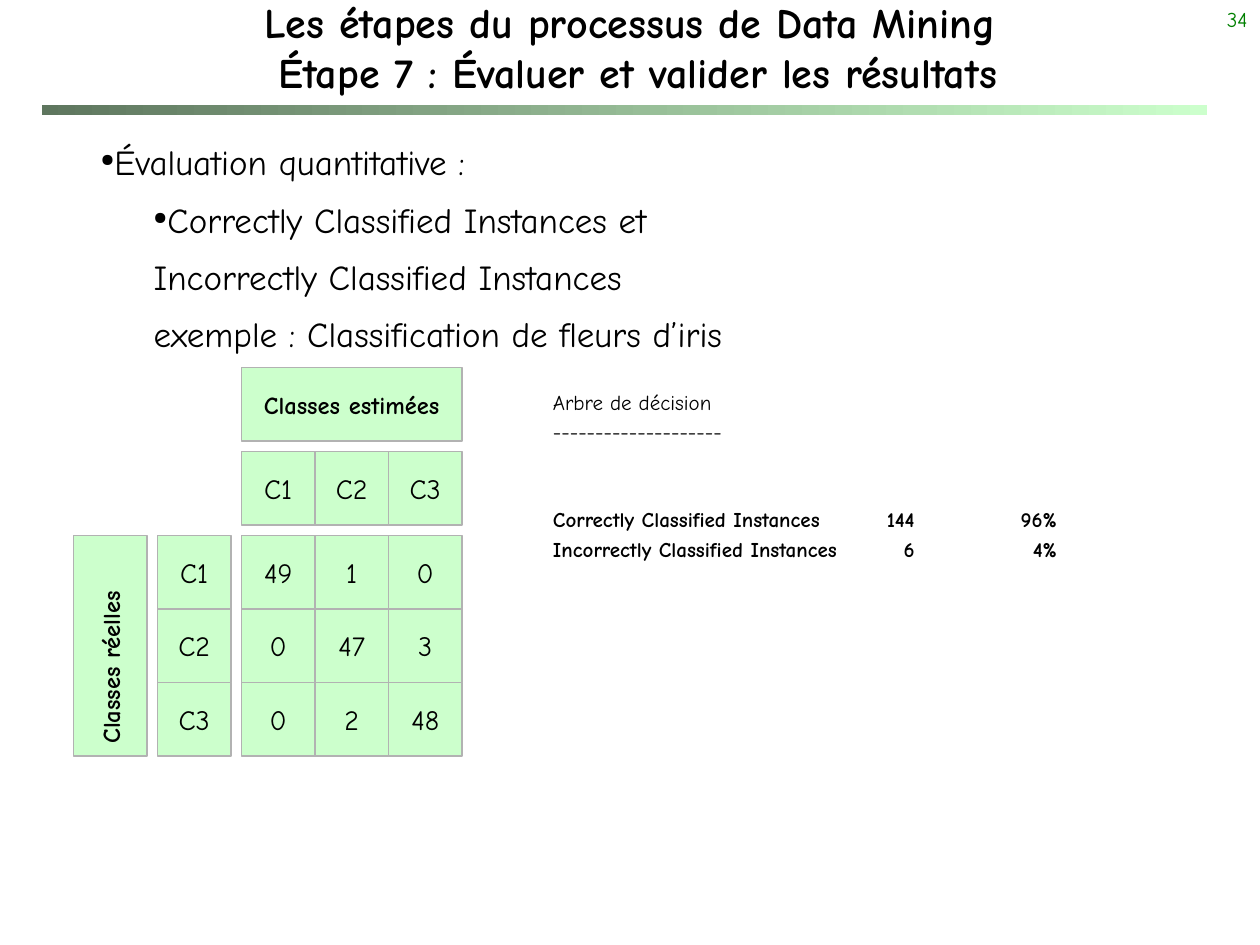
from dataclasses import dataclass

from lxml.etree import SubElement
from pptx import Presentation
from pptx.dml.color import RGBColor
from pptx.enum.shapes import MSO_SHAPE
from pptx.enum.text import MSO_ANCHOR, MSO_AUTO_SIZE, PP_ALIGN
from pptx.oxml.ns import qn
from pptx.util import Inches, Pt


@dataclass(frozen=True)
class Theme:
    """Colours, font and type sizes of the slide."""
    font: str = "Comic Neue"
    ink: str = "000000"
    number: str = "008000"
    dark: str = "5E765E"
    pale: str = "CCFFCC"
    border: str = "B2B2B2"
    title: int = 24
    body: int = 20
    cell: int = 16
    header: int = 14
    small: int = 12


T = Theme()
UNIT = Inches(1) // 12
CELL = 7
MATRIX = [[49, 1, 0], [0, 47, 3], [0, 2, 48]]
CLASSES = ["C1", "C2", "C3"]
OUTLINE = [
    (0, True, "Évaluation quantitative :"),
    (1, True, "Correctly Classified Instances et"),
    (1, False, "Incorrectly Classified Instances"),
    (1, False, "exemple : Classification de fleurs d’iris"),
]
REPORT = [
    ("Arbre de décision", False, 2.4),
    ("--------------------", False, 2.4),
    ("Correctly Classified Instances\t144\t96%", True, 36),
    ("Incorrectly Classified Instances\t6\t4%", True, 2.4),
]


def rgb(color):
    """Turn a hex string into a colour."""
    return RGBColor.from_string(color)


def add_run(p, text, size, bold=False, color=T.ink):
    """Add one formatted run to a paragraph."""
    r = p.add_run()
    r.text = text
    r.font.name = T.font
    r.font.size = Pt(size)
    r.font.bold = bold
    r.font.color.rgb = rgb(color)


def add_box(s, left, top, width, height):
    """Add a wrapping text box, in inches, and return its text frame."""
    tf = s.shapes.add_textbox(*map(Inches, (left, top, width, height))).text_frame
    tf.word_wrap = True
    return tf


def next_paragraph(tf, first):
    """Return the opening paragraph or a new one."""
    return tf.paragraphs[0] if first else tf.add_paragraph()


def add_title(s, lines):
    """Place the title and fill it line by line."""
    sp = s.shapes.title
    sp.left, sp.top, sp.width, sp.height = map(Inches, (0, 0.08, 10, 0.58))
    tf = sp.text_frame
    tf.auto_size = MSO_AUTO_SIZE.NONE
    tf.vertical_anchor = MSO_ANCHOR.MIDDLE
    p = tf.paragraphs[0]
    p.alignment = PP_ALIGN.CENTER
    for i, line in enumerate(lines):
        if i:
            p.add_line_break()
        add_run(p, line, T.title, True)


def add_rule(s):
    """Draw the gradient bar below the title."""
    sp = s.shapes.add_shape(MSO_SHAPE.RECTANGLE, *map(Inches, (0.33, 0.83, 9.25, 0.08)))
    sp.shadow.inherit = False
    sp.line.fill.background()
    sp.fill.gradient()
    sp.fill.gradient_angle = 0
    for stop, pos, color in zip(sp.fill.gradient_stops, (0, 1), (T.dark, T.pale)):
        stop.position = pos
        stop.color.rgb = rgb(color)


def add_number(s, text):
    """Write the slide number in the top right corner."""
    p = add_box(s, 7.92, 0, 2.08, 0.5).paragraphs[0]
    p.alignment = PP_ALIGN.RIGHT
    add_run(p, text, T.small, color=T.number)


def add_outline(s):
    """Write the two-level outline."""
    tf = add_box(s, 0.5, 1, 9.08, 6.25)
    for i, (level, bullet, text) in enumerate(OUTLINE):
        p = next_paragraph(tf, i == 0)
        p.level = level
        p.alignment = PP_ALIGN.JUSTIFY
        p.line_spacing = 1.2
        p.space_before = Pt(4)
        pPr = p._p.get_or_add_pPr()
        pPr.set("marL", str(Inches(0.42 * level)))
        pPr.set("indent", str(Inches(0.2)))
        if bullet:
            SubElement(pPr, qn("a:buSzPct")).set("val", "50000")
            SubElement(pPr, qn("a:buChar")).set("char", "●")
        add_run(p, text, T.body)


def add_cell(grp, col, row, text, cols=1, rows=1, header=False):
    """Add a matrix cell at a grid position, with gaps after the headers."""
    x, y = (CELL * n + min(n, 2) for n in (col, row))
    sp = grp.shapes.add_shape(
        MSO_SHAPE.RECTANGLE, (7 + x) * UNIT, (35 + y) * UNIT,
        cols * CELL * UNIT, rows * CELL * UNIT)
    sp.shadow.inherit = False
    sp.fill.solid()
    sp.fill.fore_color.rgb = rgb(T.pale)
    sp.line.color.rgb = rgb(T.border)
    sp.line.width = Pt(0.75)
    tf = sp.text_frame
    tf.word_wrap = False
    tf.vertical_anchor = MSO_ANCHOR.MIDDLE
    size = T.header if header else T.cell
    p = tf.paragraphs[0]
    p.alignment = PP_ALIGN.CENTER
    p.space_before = Pt(size * 0.2)
    add_run(p, text, size, header)
    return sp


def add_matrix(s):
    """Build the confusion matrix with its headers."""
    grp = s.shapes.add_group_shape()
    for j, values in enumerate(MATRIX):
        for i, value in enumerate(values):
            add_cell(grp, 2 + i, 2 + j, str(value))
    add_cell(grp, 2, 0, "Classes estimées", cols=3, header=True)
    side = add_cell(grp, 0, 2, "Classes réelles", rows=3, header=True)
    side.rotation = 180
    side.text_frame._txBody.bodyPr.set("vert", "eaVert")
    for i, name in enumerate(CLASSES):
        add_cell(grp, 2 + i, 1, name)
        add_cell(grp, 1, 2 + i, name)


def add_report(s):
    """Write the decision tree scores, aligned on right tabs."""
    tf = add_box(s, 4.29, 3.04, 5.01, 2.28)
    for i, (text, bold, gap) in enumerate(REPORT):
        p = next_paragraph(tf, i == 0)
        p.space_before = Pt(gap)
        if "\t" in text:
            tabs = SubElement(p._p.get_or_add_pPr(), qn("a:tabLst"))
            for pos in (2.87, 4):
                tab = SubElement(tabs, qn("a:tab"))
                tab.set("pos", str(Inches(pos)))
                tab.set("algn", "r")
        add_run(p, text, T.small, bold)


def main():
    """Build and save the slide."""
    prs = Presentation()
    prs.slide_width, prs.slide_height = Inches(10), Inches(7.5)
    s = prs.slides.add_slide(prs.slide_layouts[5])
    add_rule(s)
    add_number(s, "34")
    add_title(s, ["Les étapes du processus de Data Mining",
                  " Étape 7 : Évaluer et valider les résultats"])
    add_outline(s)
    add_matrix(s)
    add_report(s)
    prs.save("out.pptx")


if __name__ == "__main__":
    main()
